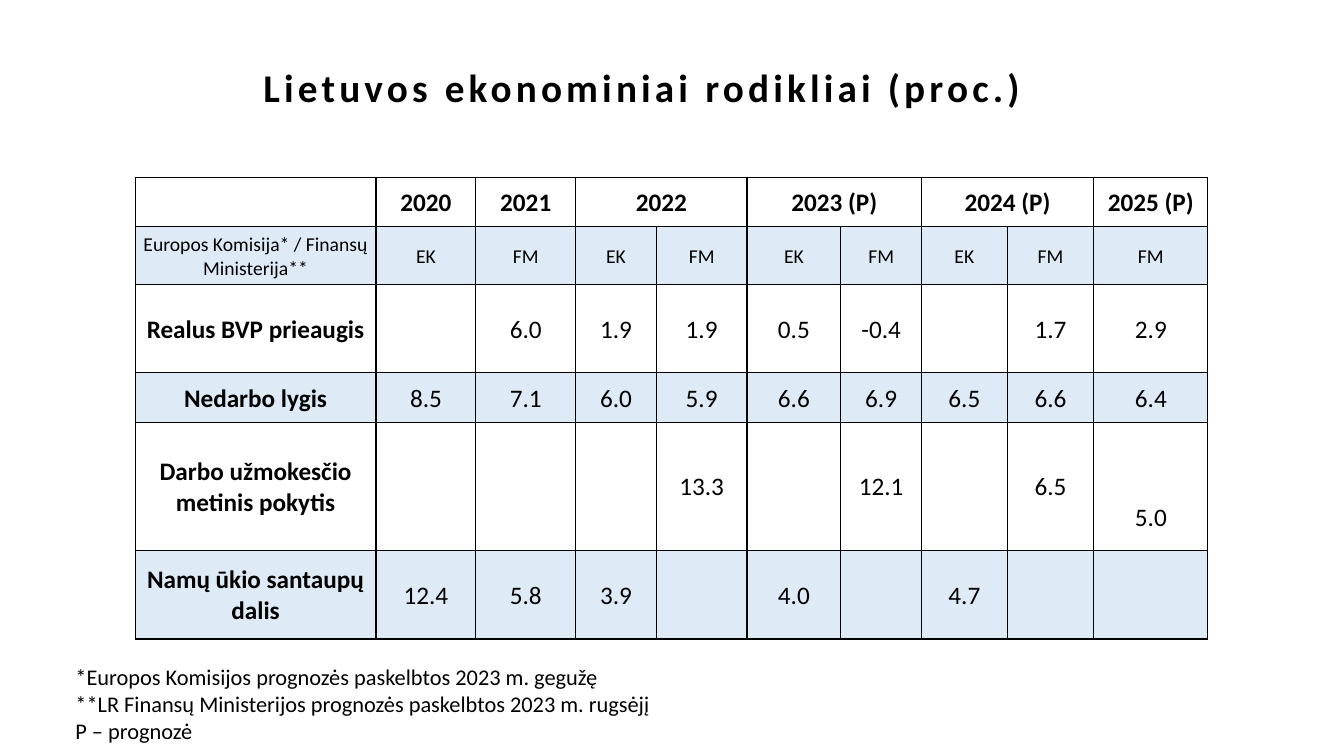
from dataclasses import dataclass

from lxml.etree import SubElement
from pptx import Presentation
from pptx.dml.color import RGBColor
from pptx.enum.text import MSO_ANCHOR as Anchor, PP_ALIGN as Align
from pptx.oxml import parse_xml
from pptx.oxml.ns import nsdecls, qn
from pptx.util import Inches, Pt


@dataclass(frozen=True)
class Theme:
    font: str = "Calibri"
    ink: RGBColor = RGBColor(0, 0, 0)
    band: RGBColor = RGBColor(0x5B, 0x9B, 0xD5)
    band_alpha: int = 20000
    title: int = 28
    figure: int = 18
    note: int = 16
    source: int = 14


theme = Theme()


def style(paragraph, size, bold=False, align=Align.LEFT):
    paragraph.alignment = align
    paragraph.font.name = theme.font
    paragraph.font.size = Pt(size)
    paragraph.font.bold = bold
    paragraph.font.color.rgb = theme.ink


def draw_borders(cell):
    for index, side in enumerate(("lnL", "lnR", "lnT", "lnB")):
        cell._tc.get_or_add_tcPr().insert(index, parse_xml(
            f'<a:{side} {nsdecls("a")} w="12700"><a:solidFill>'
            f'<a:srgbClr val="{theme.ink}"/></a:solidFill></a:{side}>'))


presentation = Presentation()
presentation.slide_width = Inches(13.33)
presentation.slide_height = Inches(7.5)
slide = presentation.slides.add_slide(presentation.slide_layouts[5])

# Title
title = slide.shapes.title
title.left, title.top = Inches(0.35), Inches(0.42)
title.width, title.height = Inches(12.04), Inches(0.95)
title.text_frame.text = "Lietuvos ekonominiai rodikliai (proc.)"
title.text_frame.vertical_anchor = Anchor.MIDDLE
heading = title.text_frame.paragraphs[0]
heading.line_spacing = 0.9
style(heading, theme.title, True, Align.CENTER)
heading.runs[0]._r.get_or_add_rPr().set("spc", "300")

# Table of indicators
indicators = [
    ["", "2020", "2021", "2022", "", "2023 (P)", "", "2024 (P)", "", "2025 (P)"],
    ["Europos Komisija* / Finansų Ministerija**",
     "EK", "FM", "EK", "FM", "EK", "FM", "EK", "FM", "FM"],
    ["Realus BVP prieaugis", "", "6.0", "1.9", "1.9", "0.5", "-0.4", "", "1.7", "2.9"],
    ["Nedarbo lygis", "8.5", "7.1", "6.0", "5.9", "6.6", "6.9", "6.5", "6.6", "6.4"],
    ["Darbo užmokesčio metinis pokytis",
     "", "", "", "13.3", "", "12.1", "", "6.5", "5.0"],
    ["Namų ūkio santaupų dalis", "12.4", "5.8", "3.9", "", "4.0", "", "4.7", "", ""],
]
column_widths = [2.39, 0.99, 0.99, 0.8, 0.9, 0.93, 0.8, 0.85, 0.86, 1.13]
row_heights = [0.49, 0.57, 0.88, 0.49, 1.27, 0.88]
YEARS, SOURCES = 0, 1

table = slide.shapes.add_table(
    len(row_heights), len(column_widths), Inches(1.34), Inches(1.76),
    Inches(sum(column_widths)), Inches(sum(row_heights))).table
table.first_row = table.horz_banding = False
for column, width in zip(table.columns, column_widths):
    column.width = Inches(width)
for row, height in zip(table.rows, row_heights):
    row.height = Inches(height)

for r, values in enumerate(indicators):
    for c, value in enumerate(values):
        cell = table.cell(r, c)
        cell.text = value
        cell.vertical_anchor = Anchor.MIDDLE
        cell.margin_left = cell.margin_right = cell.margin_top = Inches(0.02)
        cell.margin_bottom = 0
        style(cell.text_frame.paragraphs[0],
              theme.source if r == SOURCES else theme.figure,
              r == YEARS or (c == 0 and r != SOURCES), Align.CENTER)
        if r % 2:
            cell.fill.solid()
            cell.fill.fore_color.rgb = theme.band
            tint = cell._tc.tcPr.find(".//" + qn("a:srgbClr"))
            SubElement(tint, qn("a:alpha")).set("val", str(theme.band_alpha))
        else:
            cell.fill.background()
        draw_borders(cell)

# Years with two sources span two columns
for c in (3, 5, 7):
    table.cell(YEARS, c).merge(table.cell(YEARS, c + 1))

# The 2025 wage figure sits lower than the rest of its row
table.cell(4, 9).margin_top = Inches(0.62)

# Footnotes
footnotes = slide.shapes.add_textbox(
    Inches(0.65), Inches(6.53), Inches(6.67), Inches(0.91)).text_frame
footnotes.word_wrap = True
footnotes.text = "\n".join([
    "*Europos Komisijos prognozės paskelbtos 2023 m. gegužę",
    "**LR Finansų Ministerijos prognozės paskelbtos 2023 m. rugsėjį",
    "P – prognozė",
])
for footnote in footnotes.paragraphs:
    style(footnote, theme.note)

presentation.save("out.pptx")
